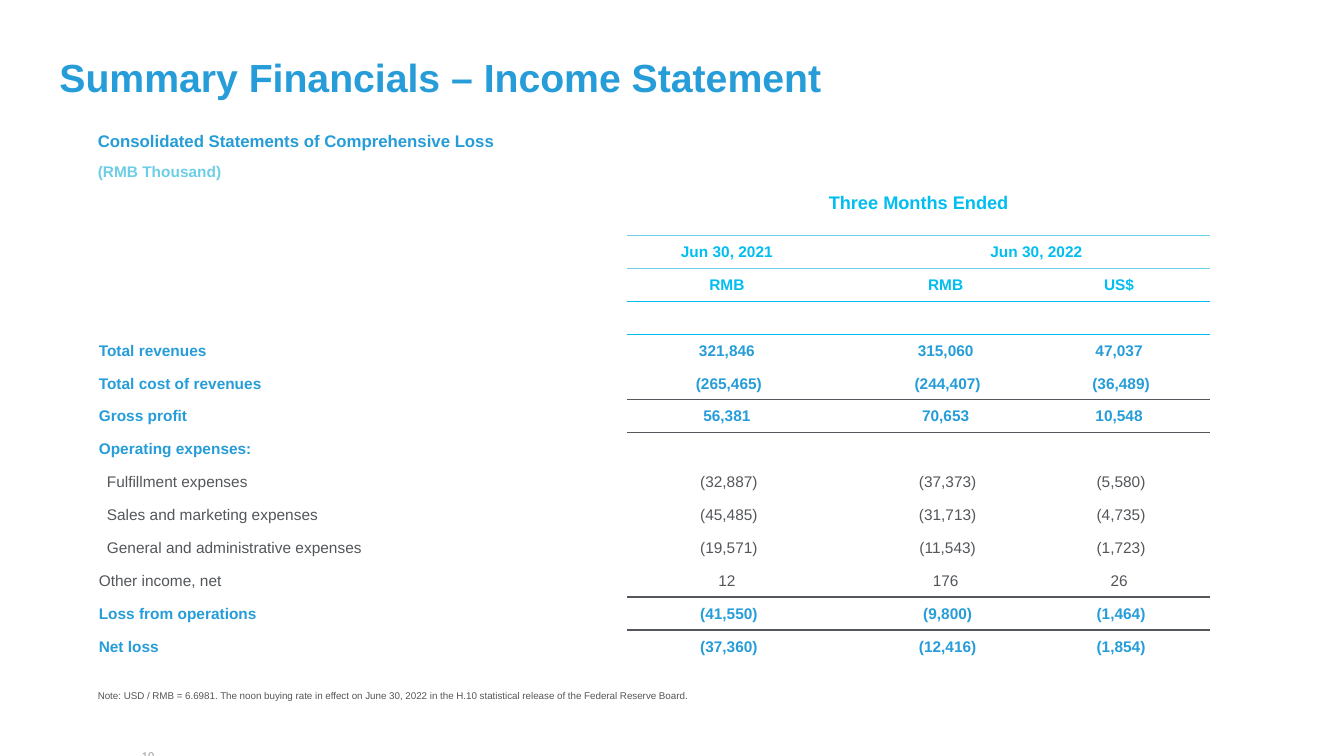
from typing import NamedTuple

from lxml import etree
from pptx import Presentation
from pptx.dml.color import RGBColor
from pptx.enum.text import MSO_ANCHOR, PP_ALIGN
from pptx.oxml.ns import qn
from pptx.util import Inches, Pt

MIDDLE, TOP = MSO_ANCHOR.MIDDLE, MSO_ANCHOR.TOP
LEFT, CENTER, RIGHT = PP_ALIGN.LEFT, PP_ALIGN.CENTER, PP_ALIGN.RIGHT

COLORS = {
    "blue": "269DD8",
    "pale": "6DCEE5",
    "cyan": "00BDF2",
    "dark": "53565A",
    "gray": "999A9B",
}
FONT = "Arial"
PLAIN_TABLE_STYLE = "{2D5ABB26-0587-4C30-8999-92F81FD0307C}"
COLUMN_WIDTHS = [4.99, 0.26, 1.98, 0.36, 1.64, 1.8]
ROW_COUNT, ROW_HEIGHT = 15, 4.9 / 15
VALUE_COLUMNS = (2, 4, 5)
FIRST_LINE_ROW = 5
MARGIN, INDENT, BRACKET_SHIFT = 0.01, 0.09, 0.05


class Style(NamedTuple):
    size: float
    color: str
    bold: bool = True


class Label(NamedTuple):
    text: str
    left: float
    top: float
    width: float
    height: float
    style: Style
    align: PP_ALIGN = LEFT
    anchor: MSO_ANCHOR = TOP
    inset: float = 0


class Line(NamedTuple):
    name: str
    values: tuple[str, ...] = ()
    bold: bool = True
    indent: float = MARGIN


class Rule(NamedTuple):
    """A horizontal line along the top of a table row."""
    row: int
    columns: tuple[int, ...]
    color: str
    width: float


class Heading(NamedTuple):
    text: str
    row: int
    column: int
    size: float = 11


LABELS = [
    Label("Summary Financials – Income Statement", 0.59, 0.53, 10.5, 0.47, Style(28, "blue")),
    Label("Consolidated Statements of Comprehensive Loss", 0.97, 1.3, 4.29, 0.2, Style(12, "blue")),
    Label("(RMB Thousand)", 0.97, 1.61, 1.37, 0.19, Style(11, "pale")),
    Label("Note: USD / RMB = 6.6981. The noon buying rate in effect on June 30, 2022 "
          "in the H.10 statistical release of the Federal Reserve Board.",
          0.97, 6.84, 9.17, 0.12, Style(7, "dark", False)),
    Label("10", 1.29, 7.42, 0.34, 0.16, Style(8, "gray", False), RIGHT, MIDDLE, 0.1),
]
HEADINGS = [
    Heading("Three Months Ended", 0, 2, 13),
    Heading("Jun 30, 2021", 2, 2),
    Heading("Jun 30, 2022", 2, 4),
    Heading("RMB", 3, 2),
    Heading("RMB", 3, 4),
    Heading("US$", 3, 5),
]
LINES = [
    Line("Total revenues", ("321,846", "315,060", "47,037")),
    Line("Total cost of revenues", ("(265,465)", "(244,407)", "(36,489)")),
    Line("Gross profit", ("56,381", "70,653", "10,548")),
    Line("Operating expenses:"),
    Line("Fulfillment expenses", ("(32,887)", "(37,373)", "(5,580)"), False, INDENT),
    Line("Sales and marketing expenses", ("(45,485)", "(31,713)", "(4,735)"), False, INDENT),
    Line("General and administrative expenses", ("(19,571)", "(11,543)", "(1,723)"), False, INDENT),
    Line("Other income, net", ("12", "176", "26"), False),
    Line("Loss from operations", ("(41,550)", "(9,800)", "(1,464)")),
    Line("Net loss", ("(37,360)", "(12,416)", "(1,854)")),
]
FULL_WIDTH = (2, 3, 4, 5)
RULES = [
    Rule(2, FULL_WIDTH, "pale", 0.75),
    Rule(3, VALUE_COLUMNS, "pale", 0.75),
    Rule(4, FULL_WIDTH, "cyan", 0.5),
    *(Rule(row, FULL_WIDTH, "dark", 1) for row in (7, 13, 14)),
]
MERGES = [((0, 0), (1, 0)), ((0, 2), (1, 5)), ((2, 4), (2, 5))]


def write(frame, text: str, style: Style, align: PP_ALIGN) -> None:
    para = frame.paragraphs[0]
    para.alignment = align
    span = para.add_run()
    span.text = text
    formats = {"name": FONT, "size": Pt(style.size), "bold": style.bold}
    for name, value in formats.items():
        setattr(span.font, name, value)
    span.font.color.rgb = RGBColor.from_string(COLORS[style.color])


def add_label(page, label: Label) -> None:
    box = page.shapes.add_textbox(*map(Inches, label[1:5]))
    frame = box.text_frame
    formats = {
        "word_wrap": True,
        "vertical_anchor": label.anchor,
        "margin_left": Inches(label.inset),
        "margin_right": Inches(label.inset),
        "margin_top": 0,
        "margin_bottom": 0,
    }
    for name, value in formats.items():
        setattr(frame, name, value)
    write(frame, label.text, label.style, label.align)


def add_border(cell, tag: str, rule: Rule) -> None:
    properties = cell._tc.get_or_add_tcPr()
    border = etree.Element(qn(tag), w=str(Pt(rule.width)))
    fill = etree.SubElement(border, qn("a:solidFill"))
    etree.SubElement(fill, qn("a:srgbClr"), val=COLORS[rule.color])
    # Borders come before the cell fill, the top one before the bottom one.
    position = 0 if tag == "a:lnT" else len(properties.findall(qn("a:lnT")))
    properties.insert(position, border)


def add_statement(page) -> None:
    shape = page.shapes.add_table(
        ROW_COUNT, len(COLUMN_WIDTHS), Inches(0.97), Inches(1.68),
        Inches(sum(COLUMN_WIDTHS)), Inches(ROW_COUNT * ROW_HEIGHT))
    for style_id in shape.element.iter(qn("a:tableStyleId")):
        style_id.text = PLAIN_TABLE_STYLE
    table = shape.table
    table.first_row = table.horz_banding = False
    for column, width in zip(table.columns, COLUMN_WIDTHS):
        column.width = Inches(width)
    for row in table.rows:
        row.height = Inches(ROW_HEIGHT)
    formats = {
        "vertical_anchor": MIDDLE,
        "margin_left": Inches(MARGIN),
        "margin_right": Inches(MARGIN),
        "margin_top": Inches(MARGIN),
        "margin_bottom": 0,
    }
    for cell in table.iter_cells():
        cell.fill.background()
        for name, value in formats.items():
            setattr(cell, name, value)
    for first, last in MERGES:
        table.cell(*first).merge(table.cell(*last))

    for heading in HEADINGS:
        cell = table.cell(heading.row, heading.column)
        write(cell.text_frame, heading.text, Style(heading.size, "cyan"), CENTER)
    for row, line in enumerate(LINES, FIRST_LINE_ROW):
        style = Style(11, "blue" if line.bold else "dark", line.bold)
        name_cell = table.cell(row, 0)
        name_cell.margin_left = Inches(line.indent)
        write(name_cell.text_frame, line.name, style, LEFT)
        for column, value in zip(VALUE_COLUMNS, line.values):
            cell = table.cell(row, column)
            if value.startswith("("):
                cell.margin_left = Inches(BRACKET_SHIFT)
            write(cell.text_frame, value, style, CENTER)
    for rule in RULES:
        for column in rule.columns:
            add_border(table.cell(rule.row - 1, column), "a:lnB", rule)
            add_border(table.cell(rule.row, column), "a:lnT", rule)


def main() -> None:
    deck = Presentation()
    deck.slide_width, deck.slide_height = Inches(13.33), Inches(7.5)
    page = deck.slides.add_slide(deck.slide_layouts[6])
    add_statement(page)
    for label in LABELS:
        add_label(page, label)
    deck.save("out.pptx")


if __name__ == "__main__":
    main()
